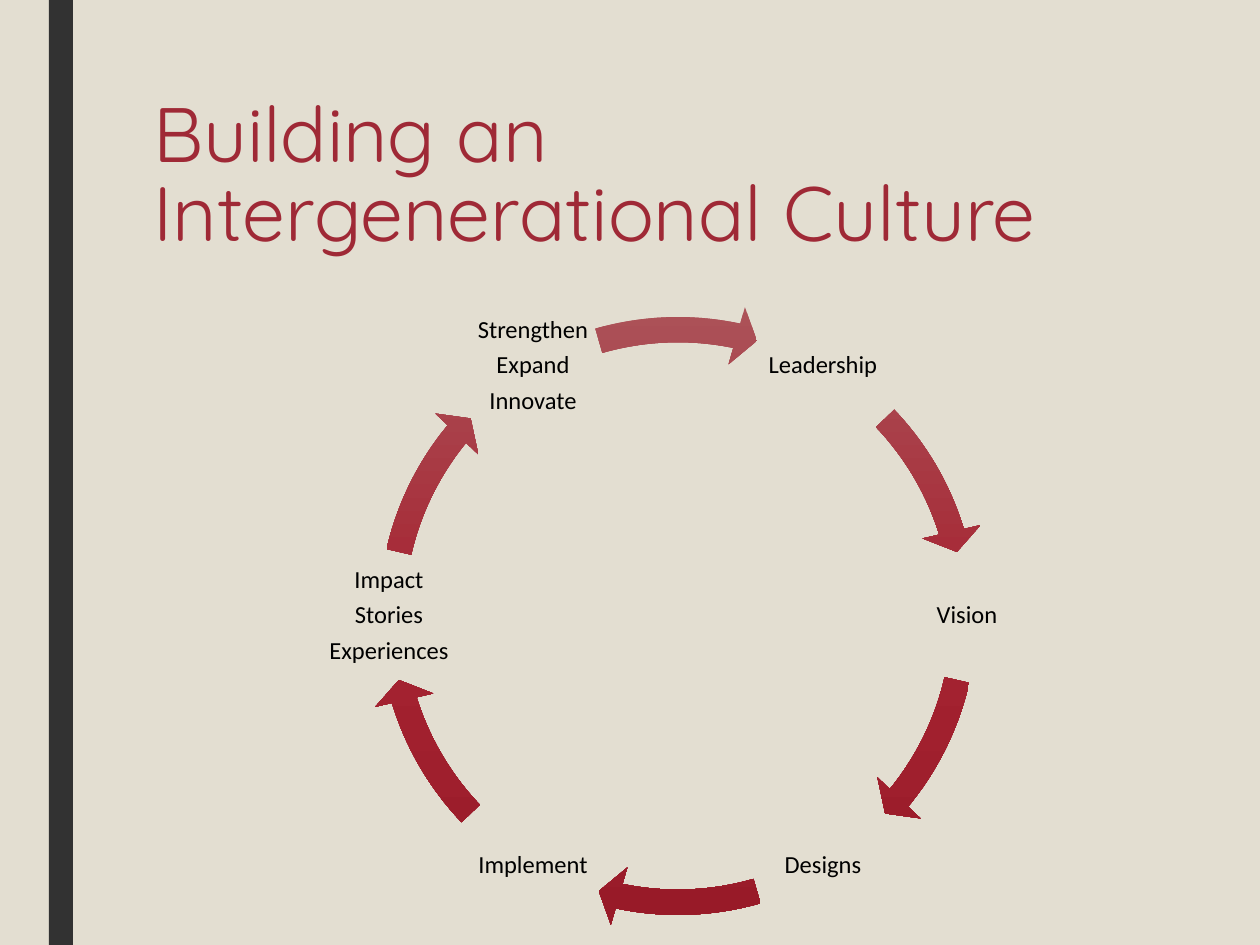
"""Build the slide about the cycle of an intergenerational culture."""
from copy import deepcopy
from dataclasses import dataclass
from math import cos, radians, sin

from pptx import Presentation
from pptx.dml.color import RGBColor
from pptx.enum.shapes import MSO_SHAPE
from pptx.enum.text import MSO_ANCHOR, PP_ALIGN
from pptx.slide import Slide
from pptx.text.text import TextFrame
from pptx.util import Emu, Pt

RECTANGLE = MSO_SHAPE.RECTANGLE
CIRCULAR_ARROW = MSO_SHAPE.CIRCULAR_ARROW
TOP = MSO_ANCHOR.TOP
MIDDLE = MSO_ANCHOR.MIDDLE
CENTER = PP_ALIGN.CENTER
EMU_PER_PX = 914400 / 126
ADJUSTMENT_PER_DEGREE = 0.6


@dataclass(frozen=True)
class Theme:
    background: str = "E3DED1"
    sidebar: str = "323232"
    title: str = "9F2936"
    label: str = "000000"
    gradient: tuple[str, ...] = ("AC5359", "A52331", "981A28")
    title_font: str = "Quicksand"
    label_font: str = "Calibri"
    title_size: float = 44
    label_size: float = 14
    label_gap: float = 4.9


@dataclass(frozen=True)
class Rect:
    left: int
    top: int
    width: int
    height: int

    def emu(self) -> tuple[Emu, Emu, Emu, Emu]:
        return px(self.left), px(self.top), px(self.width), px(self.height)


@dataclass(frozen=True)
class Stage:
    lines: tuple[str, ...]
    arrow_start: float
    arrow_end: float


THEME = Theme()
PAGE_WIDTH, PAGE_HEIGHT = 1260, 945
SIDEBAR = Rect(49, 0, 24, PAGE_HEIGHT)
TITLE = Rect(141, 94, 993, 204)
TITLE_LINES = ("Building an ", "Intergenerational Culture")
CENTER_X, CENTER_Y = 678, 616
LABEL_RADIUS, LABEL_SIDE = 289, 130
RING_SIDE = 632
FIRST_ANGLE = -60
STAGES = (
    Stage(("Leadership",), 316.37, 342.9),
    Stage(("Vision",), 12.94, 39.46),
    Stage(("Designs",), 73.97, 101.86),
    Stage(("Implement",), 136.37, 162.9),
    Stage(("Impact", "Stories", "Experiences"), 192.94, 219.46),
    Stage(("Strengthen", "Expand", "Innovate"), 253.97, 281.86),
)


def px(length: float) -> Emu:
    return Emu(round(length * EMU_PER_PX))


def color(value: str) -> RGBColor:
    return RGBColor.from_string(value)


def square(center_x: float, center_y: float, side: int) -> Rect:
    return Rect(round(center_x - side / 2), round(center_y - side / 2), side, side)


def add_text_frame(page: Slide, rect: Rect, anchor: MSO_ANCHOR) -> TextFrame:
    frame = page.shapes.add_textbox(*rect.emu()).text_frame
    frame.word_wrap = True
    frame.vertical_anchor = anchor
    return frame


def add_sidebar(page: Slide) -> None:
    bar = page.shapes.add_shape(RECTANGLE, *SIDEBAR.emu())
    bar.shadow.inherit = False
    bar.fill.solid()
    bar.fill.fore_color.rgb = color(THEME.sidebar)
    bar.line.fill.background()


def add_span(para, text: str, font: str, size: float, ink: str) -> None:
    span = para.add_run()
    span.text = text
    span.font.name = font
    span.font.size = Pt(size)
    span.font.color.rgb = color(ink)


def add_title(page: Slide) -> None:
    para = add_text_frame(page, TITLE, TOP).paragraphs[0]
    para.line_spacing = 0.85
    for index, line in enumerate(TITLE_LINES):
        if index:
            para.add_line_break()
        add_span(para, line, THEME.title_font, THEME.title_size, THEME.title)


def add_label(page: Slide, stage: Stage, angle: float) -> None:
    center_x = CENTER_X + LABEL_RADIUS * cos(radians(angle))
    center_y = CENTER_Y + LABEL_RADIUS * sin(radians(angle))
    frame = add_text_frame(page, square(center_x, center_y, LABEL_SIDE), MIDDLE)
    frame.margin_left = frame.margin_right = px(2)
    frame.margin_top = frame.margin_bottom = px(2)
    for index, line in enumerate(stage.lines):
        para = frame.add_paragraph() if index else frame.paragraphs[0]
        para.alignment = CENTER
        para.line_spacing = 0.9
        para.space_after = Pt(THEME.label_gap)
        add_span(para, line, THEME.label_font, THEME.label_size, THEME.label)


def add_arrow(page: Slide, stage: Stage) -> None:
    ring = square(CENTER_X, CENTER_Y, RING_SIDE)
    arrow = page.shapes.add_shape(CIRCULAR_ARROW, *ring.emu())
    arrow.shadow.inherit = False
    arrow.line.fill.background()
    start = stage.arrow_start * ADJUSTMENT_PER_DEGREE
    end = stage.arrow_end * ADJUSTMENT_PER_DEGREE
    for index, value in enumerate((0.04, 2.5, end, start, 0.047)):
        arrow.adjustments[index] = value
    arrow.fill.gradient()
    arrow.fill.gradient_angle = 270
    first_stop = arrow.fill.gradient_stops[0]._gs
    first_stop.addnext(deepcopy(first_stop))
    last = len(THEME.gradient) - 1
    for index, stop in enumerate(arrow.fill.gradient_stops):
        stop.position = index / last
        stop.color.rgb = color(THEME.gradient[index])


def main() -> None:
    deck = Presentation()
    deck.slide_width, deck.slide_height = px(PAGE_WIDTH), px(PAGE_HEIGHT)
    page = deck.slides.add_slide(deck.slide_layouts[6])
    page.background.fill.solid()
    page.background.fill.fore_color.rgb = color(THEME.background)
    add_sidebar(page)
    add_title(page)
    for index, stage in enumerate(STAGES):
        add_label(page, stage, FIRST_ANGLE + index * 360 / len(STAGES))
        add_arrow(page, stage)
    deck.save("out.pptx")


if __name__ == "__main__":
    main()
